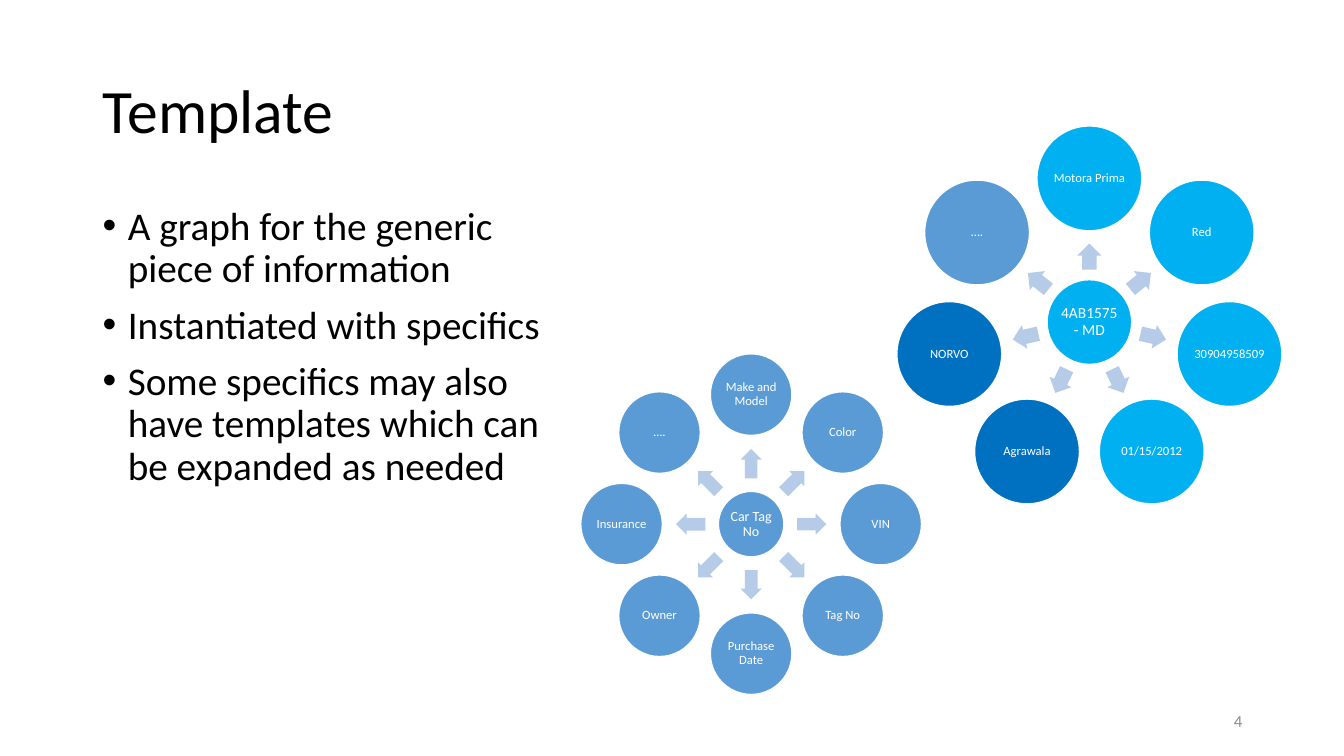
from math import cos, radians, sin

from lxml.etree import SubElement
from pptx import Presentation
from pptx.dml.color import RGBColor
from pptx.enum.shapes import MSO_SHAPE
from pptx.enum.text import MSO_ANCHOR, MSO_AUTO_SIZE, PP_ALIGN
from pptx.oxml.ns import qn
from pptx.util import Inches, Pt

BLACK = RGBColor(0x00, 0x00, 0x00)
WHITE = RGBColor(0xFF, 0xFF, 0xFF)
GRAY = RGBColor(0x8C, 0x8C, 0x8C)
BLUE = RGBColor(0x5B, 0x9B, 0xD5)
SKY = RGBColor(0x00, 0xB0, 0xF0)
NAVY = RGBColor(0x00, 0x70, 0xC0)
PALE = RGBColor(0xB5, 0xCB, 0xE7)

POINTS = [
    "A graph for the generic piece of information",
    "Instantiated with specifics",
    "Some specifics may also have templates which can be expanded as needed",
]
GENERIC_HUB = ("Car Tag No", BLUE)
GENERIC_NODES = [
    ("Make and Model", BLUE), ("Color", BLUE), ("VIN", BLUE), ("Tag No", BLUE),
    ("Purchase Date", BLUE), ("Owner", BLUE), ("Insurance", BLUE), ("….", BLUE),
]
SPECIFIC_HUB = ("4AB1575 - MD", SKY)
SPECIFIC_NODES = [
    ("Motora Prima", SKY), ("Red", SKY), ("30904958509", SKY),
    ("01/15/2012", SKY), ("Agrawala", NAVY), ("NORVO", NAVY), ("….", BLUE),
]


def format_paragraph(paragraph, size, color, alignment, line_spacing=0.9):
    """Apply font, colour, alignment and line spacing to one paragraph."""
    paragraph.alignment = alignment
    paragraph.line_spacing = line_spacing
    for run in paragraph.runs:
        run.font.name = "Calibri"
        run.font.size = Pt(size)
        run.font.color.rgb = color


def add_title(slide, left, top, width, height):
    """Place and format the title placeholder."""
    title = slide.shapes.title
    title.left, title.top = Inches(left), Inches(top)
    title.width, title.height = Inches(width), Inches(height)
    text_frame = title.text_frame
    text_frame.text = "Template"
    text_frame.auto_size = MSO_AUTO_SIZE.NONE
    text_frame.vertical_anchor = MSO_ANCHOR.MIDDLE
    format_paragraph(text_frame.paragraphs[0], 44, BLACK, PP_ALIGN.LEFT)


def add_bullets(slide, left, top, width, height):
    """Add the bulleted list of points."""
    box = slide.shapes.add_textbox(
        Inches(left), Inches(top), Inches(width), Inches(height))
    text_frame = box.text_frame
    text_frame.word_wrap = True
    text_frame.text = "\n".join(POINTS)
    for paragraph in text_frame.paragraphs:
        format_paragraph(paragraph, 28, BLACK, PP_ALIGN.LEFT)
        paragraph.space_before = Pt(10)
        properties = paragraph._p.get_or_add_pPr()
        properties.set("marL", str(Inches(0.25)))
        properties.set("indent", str(Inches(-0.25)))
        SubElement(properties, qn("a:buFont")).set("typeface", "Arial")
        SubElement(properties, qn("a:buChar")).set("char", "•")


def add_centered(slide, kind, center_x, center_y, width, height, color):
    """Add a filled preset shape around a centre point."""
    shape = slide.shapes.add_shape(
        kind, Inches(center_x - width / 2), Inches(center_y - height / 2),
        Inches(width), Inches(height))
    shape.shadow.inherit = False
    shape.fill.solid()
    shape.fill.fore_color.rgb = color
    shape.line.fill.background()
    return shape


def add_circle(slide, center_x, center_y, diameter, node, size):
    """Add one labelled circle."""
    label, color = node
    circle = add_centered(slide, MSO_SHAPE.OVAL, center_x, center_y,
                          diameter, diameter, color)
    circle.line.color.rgb = WHITE
    circle.line.width = Pt(1)
    text_frame = circle.text_frame
    text_frame.text = label
    text_frame.word_wrap = True
    text_frame.vertical_anchor = MSO_ANCHOR.MIDDLE
    text_frame.margin_left = text_frame.margin_right = Inches(0.01)
    text_frame.margin_top = text_frame.margin_bottom = Inches(0.01)
    format_paragraph(text_frame.paragraphs[0], size, WHITE, PP_ALIGN.CENTER)


def add_radial(slide, left, top, side, hub, nodes, hub_diameter, hub_size,
               node_diameter, arrow_radius, arrow_width, arrow_height):
    """Add a hub with arrows to evenly spaced nodes inside a square box."""
    center_x, center_y = left + side / 2, top + side / 2
    node_radius = (side - node_diameter) / 2
    add_circle(slide, center_x, center_y, hub_diameter, hub, hub_size)
    for index, node in enumerate(nodes):
        angle = 360 * index / len(nodes) - 90
        across, down = cos(radians(angle)), sin(radians(angle))
        arrow = add_centered(
            slide, MSO_SHAPE.RIGHT_ARROW, center_x + arrow_radius * across,
            center_y + arrow_radius * down, arrow_width, arrow_height, PALE)
        arrow.adjustments[0] = 0.6
        arrow.adjustments[1] = 0.5
        arrow.rotation = angle % 360
        add_circle(slide, center_x + node_radius * across,
                   center_y + node_radius * down, node_diameter, node, 9)


def add_slide_number(slide, left, top, width, height):
    """Add the slide number at the lower right."""
    box = slide.shapes.add_textbox(
        Inches(left), Inches(top), Inches(width), Inches(height))
    text_frame = box.text_frame
    text_frame.word_wrap = True
    text_frame.vertical_anchor = MSO_ANCHOR.MIDDLE
    text_frame.text = "4"
    format_paragraph(text_frame.paragraphs[0], 12, GRAY, PP_ALIGN.RIGHT, 1.0)


def main():
    """Build and save the presentation."""
    presentation = Presentation()
    presentation.slide_width = Inches(13.33)
    presentation.slide_height = Inches(7.5)
    slide = presentation.slides.add_slide(presentation.slide_layouts[5])
    add_title(slide, 0.92, 0.4, 11.5, 1.45)
    add_bullets(slide, 0.92, 2, 4.56, 4.76)
    add_radial(slide, 5.76, 3.51, 3.38, GENERIC_HUB, GENERIC_NODES,
               hub_diameter=0.65, hub_size=10, node_diameter=0.81,
               arrow_radius=0.6, arrow_width=0.29, arrow_height=0.21)
    add_radial(slide, 8.86, 1.25, 3.89, SPECIFIC_HUB, SPECIFIC_NODES,
               hub_diameter=0.84, hub_size=11, node_diameter=1.04,
               arrow_radius=0.65, arrow_width=0.26, arrow_height=0.24)
    add_slide_number(slide, 9.42, 6.95, 3, 0.4)
    presentation.save("out.pptx")


if __name__ == "__main__":
    main()
